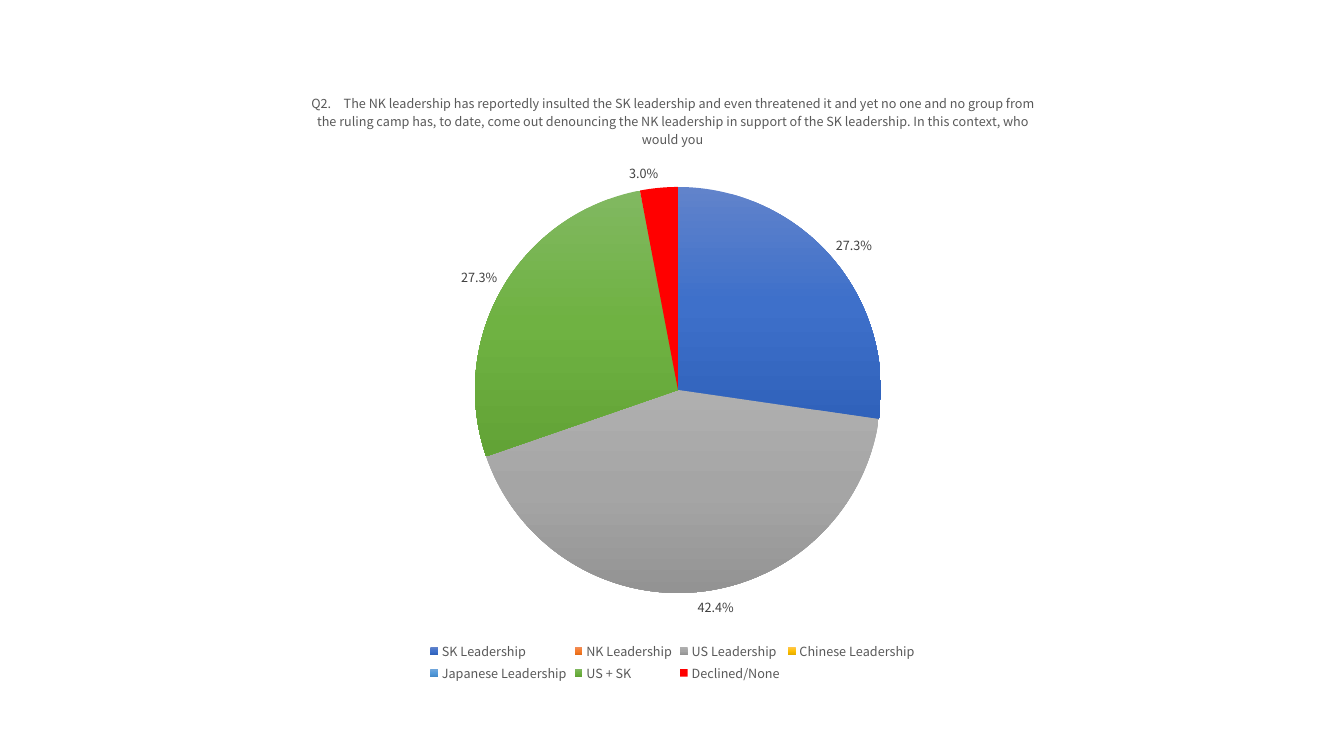
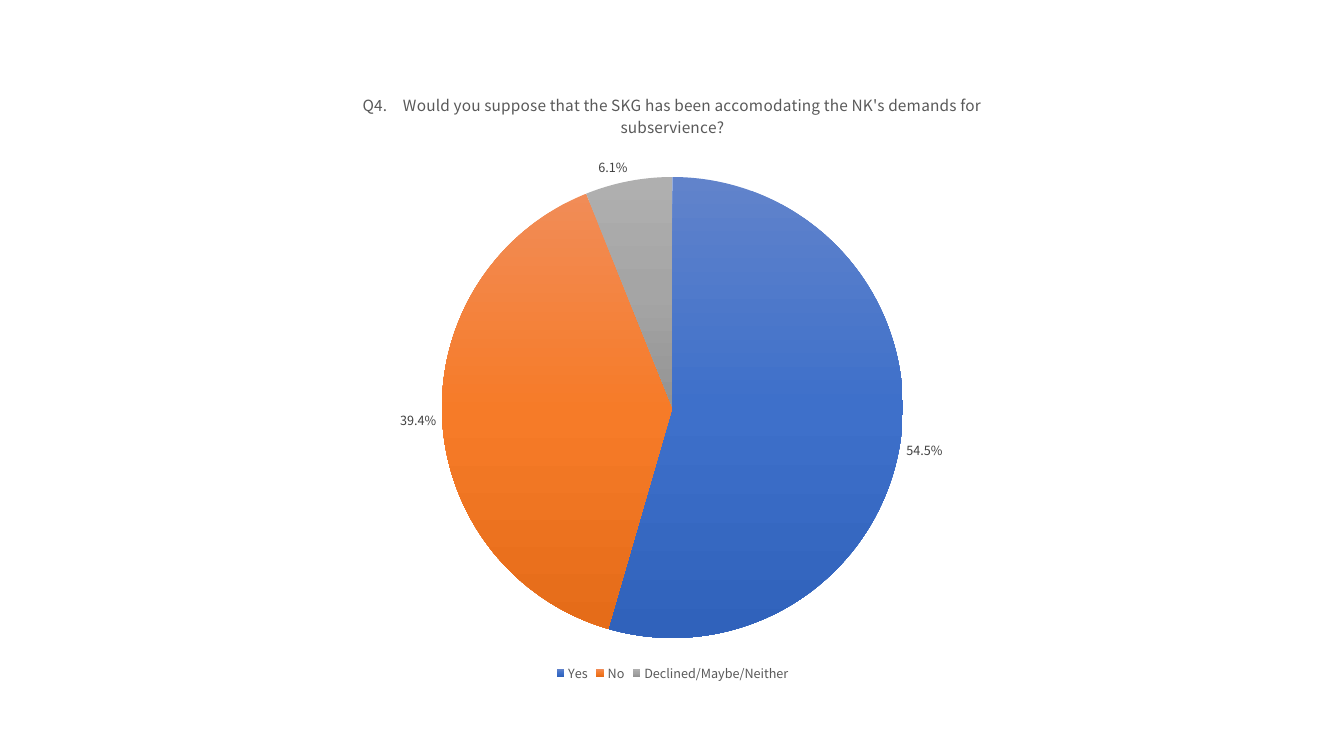
from copy import deepcopy

from lxml.etree import SubElement
from pptx import Presentation
from pptx.chart.data import CategoryChartData
from pptx.dml.color import RGBColor
from pptx.enum.chart import XL_CHART_TYPE as ChartType
from pptx.enum.chart import XL_LABEL_POSITION as LabelPosition
from pptx.enum.chart import XL_LEGEND_POSITION as LegendPosition
from pptx.oxml import parse_xml
from pptx.oxml.ns import nsdecls, qn
from pptx.util import Emu, Pt

# Shared geometry, in px (left, top, width, height)
PX_PER_INCH = 100.8
SLIDE_SIZE = (1344, 756)
CHART_BOX = (216, 71, 913, 615)

# Shared text style
FONT = "Noto Sans CJK KR"
BLACK = RGBColor(0x00, 0x00, 0x00)
TEXT_GRAY = RGBColor(0x59, 0x59, 0x59)
LABEL_GRAY = RGBColor(0x40, 0x40, 0x40)
PERCENT = "0.0%"

# Slice colours: three stops from top to bottom, or one plain colour
RED = RGBColor(0xFF, 0x00, 0x00)
SLICE_FILLS = [
    [RGBColor.from_string(stop) for stop in stops.split()]
    for stops in (
        "6183CB 3E70CA 3062BB",  # blue
        "F18C57 F67B28 E56C19",  # orange
        "AFAFAF A5A5A5 939393",  # gray
        "FFC64B FFC000 E3AB00",  # gold
        "71A6DB 559BDB 448ACA",  # light blue
        "81B861 6FB242 62A336",  # green
    )
] + [[RED]]

QUESTIONS = [
    {
        "title": "Q2. The NK leadership has reportedly insulted the SK leadership "
                 "and even threatened it and yet no one and no group from the ruling "
                 "camp has, to date, come out denouncing the NK leadership in support "
                 "of the SK leadership. In this context, who would you",
        "title_size": 9,
        "pie_box": (475, 187, 406, 406),
        "answers": {
            "SK Leadership": 0.273,
            "NK Leadership": 0,
            "US Leadership": 0.424,
            "Chinese Leadership": 0,
            "Japanese Leadership": 0,
            "US + SK": 0.273,
            "Declined/None": 0.03,
        },
    },
    {
        "title": "Q4. Would you suppose that the SKG has been accomodating "
                 "the NK's demands for subservience?",
        "title_size": 11,
        "pie_box": (442, 177, 461, 461),
        "answers": {"Yes": 0.545, "No": 0.394, "Declined/Maybe/Neither": 0.061},
    },
]


def px(length):
    return Emu(round(length * 914400 / PX_PER_INCH))


def style_font(font, size, color):
    values = {"name": FONT, "size": Pt(size), "bold": False}
    for name, value in values.items():
        setattr(font, name, value)
    font.color.rgb = color


def add_title(chart, text, size):
    """Write the question, with a wide gap after its number."""
    chart.has_title = True
    para = chart.chart_title.text_frame.paragraphs[0]
    number, question = text.split(" ", 1)
    for part in (number, "\u2003", question):
        span = para.add_run()
        span.text = part
        style_font(span.font, size, TEXT_GRAY)


def add_legend(chart):
    chart.has_legend = True
    legend = chart.legend
    legend.position = LegendPosition.BOTTOM
    legend.include_in_layout = False
    style_font(legend.font, 9, TEXT_GRAY)


def fill_slice(series, index, colors):
    fill = series.points[index].format.fill
    if len(colors) == 1:
        fill.solid()
        fill.fore_color.rgb = colors[0]
        return
    fill.gradient()
    fill.gradient_angle = 270
    # The default gradient has two stops: add the middle one
    stop_list = series._element.xpath(f'c:dPt[c:idx/@val="{index}"]//a:gsLst')[0]
    stop_list.insert(1, deepcopy(stop_list[0]))
    for stop, position, color in zip(fill.gradient_stops, (0, 0.5, 1), colors):
        stop.position = position
        stop.color.rgb = color


def add_labels(plot, values):
    """Show each share outside its slice, leaving out empty slices."""
    plot.has_data_labels = True
    labels = plot.data_labels
    formats = {
        "number_format": PERCENT,
        "number_format_is_linked": False,
        "show_value": True,
        "show_percentage": False,
        "position": LabelPosition.OUTSIDE_END,
    }
    # The series has its own labels, so that single ones can be dropped
    series_labels = plot.series[0].data_labels
    for target in (labels, series_labels):
        for name, value in formats.items():
            setattr(target, name, value)
        style_font(target.font, 9, LABEL_GRAY)
    empty = [index for index, value in enumerate(values) if value == 0]
    for place, index in enumerate(empty):
        label = parse_xml(
            f'<c:dLbl {nsdecls("c")}><c:idx val="{index}"/><c:delete val="1"/></c:dLbl>'
        )
        series_labels._element.insert(place, label)


def place_pie(chart, pie_box):
    """Fix the plot area as fractions of the chart frame."""
    plot_area = chart._chartSpace.chart.plotArea
    for old in plot_area.findall(qn("c:layout")):
        plot_area.remove(old)
    layout = parse_xml(f'<c:layout {nsdecls("c")}><c:manualLayout/></c:layout>')
    left, top, width, height = CHART_BOX
    pie_left, pie_top, pie_width, pie_height = pie_box
    settings = {
        "layoutTarget": "inner",
        "xMode": "edge",
        "yMode": "edge",
        "x": round((pie_left - left) / width, 4),
        "y": round((pie_top - top) / height, 4),
        "w": round(pie_width / width, 4),
        "h": round(pie_height / height, 4),
    }
    for name, value in settings.items():
        SubElement(layout[0], qn(f"c:{name}")).set("val", str(value))
    plot_area.insert(0, layout)


def add_pie(page, title, title_size, pie_box, answers):
    data = CategoryChartData(number_format=PERCENT)
    data.categories = list(answers)
    data.add_series(title, list(answers.values()))
    box = [px(length) for length in CHART_BOX]
    chart = page.shapes.add_chart(ChartType.PIE, *box, data).chart
    style_font(chart.font, 10, BLACK)

    add_title(chart, title, title_size)
    add_legend(chart)
    plot = chart.plots[0]
    plot.vary_by_categories = True
    for index, colors in zip(range(len(answers)), SLICE_FILLS):
        fill_slice(plot.series[0], index, colors)
    add_labels(plot, answers.values())
    place_pie(chart, pie_box)


def main():
    deck = Presentation()
    deck.slide_width, deck.slide_height = map(px, SLIDE_SIZE)
    blank = deck.slide_layouts[6]
    for question in QUESTIONS:
        add_pie(deck.slides.add_slide(blank), **question)
    deck.save("out.pptx")


if __name__ == "__main__":
    main()
